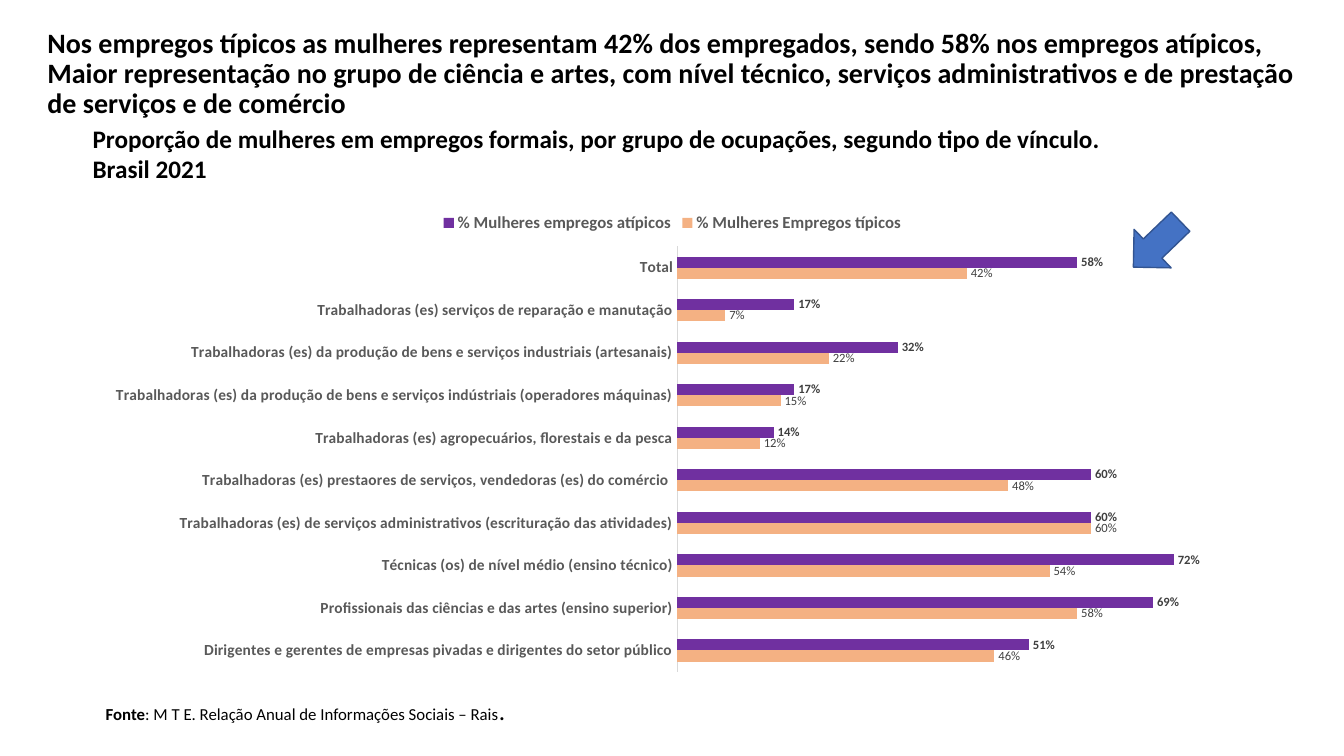
import pptx
import pptx.chart.data
import pptx.dml.color
import pptx.enum.chart
import pptx.enum.shapes
import pptx.enum.text
import pptx.util
from pptx.util import Inches


def color(hex_text):
    return pptx.dml.color.RGBColor.from_string(hex_text)


def format_font(font, size, hex_text, bold=False):
    font.name = "Calibri"
    font.size = pptx.util.Pt(size)
    font.bold = bold
    font.color.rgb = color(hex_text)


presentation = pptx.Presentation()
presentation.slide_width = Inches(13.33)
presentation.slide_height = Inches(7.5)
slide = presentation.slides.add_slide(presentation.slide_layouts[5])

# Title
title = slide.shapes.title
title.left, title.top = Inches(0.37), Inches(0.26)
title.width, title.height = Inches(12.64), Inches(0.96)
title_frame = title.text_frame
title_frame.text = (
    "Nos empregos típicos as mulheres representam 42% dos empregados, "
    "sendo 58% nos empregos atípicos, \v"
    "Maior representação no grupo de ciência e artes, com nível técnico, "
    "serviços administrativos e de prestação de serviços e de comércio"
)
title_frame.word_wrap = True
title_frame.auto_size = pptx.enum.text.MSO_AUTO_SIZE.NONE
title_frame.vertical_anchor = pptx.enum.text.MSO_ANCHOR.MIDDLE
paragraph = title_frame.paragraphs[0]
paragraph.alignment = pptx.enum.text.PP_ALIGN.LEFT
paragraph.line_spacing = 0.9
paragraph.space_before = pptx.util.Pt(0)
for run in paragraph.runs:
    format_font(run.font, 20, "000000", True)

# Subtitle
subtitle = slide.shapes.add_textbox(Inches(0.82), Inches(1.17), Inches(10.4), Inches(0.71))
subtitle.text_frame.word_wrap = True
subtitle.text_frame.text = (
    "Proporção de mulheres em empregos formais, por grupo de ocupações, "
    "segundo tipo de vínculo. Brasil 2021"
)
format_font(subtitle.text_frame.paragraphs[0].runs[0].font, 18, "000000", True)

# Data source
source = slide.shapes.add_textbox(Inches(0.95), Inches(6.83), Inches(6.67), Inches(0.41))
source.text_frame.word_wrap = True
paragraph = source.text_frame.paragraphs[0]
paragraph.line_spacing = 1.07
paragraph.space_after = pptx.util.Pt(8)
for text, size, bold in [
    ("Fonte", 12, True),
    (": M T E. Relação Anual de Informações Sociais – Rais", 12, False),
    (".", 18, False),
]:
    run = paragraph.add_run()
    run.text = text
    format_font(run.font, size, "000000", bold)

# Bar chart: occupation, share in typical jobs, share in atypical jobs
occupations = [
    ("Dirigentes e gerentes de empresas pivadas e dirigentes do setor público", 0.46, 0.51),
    ("Profissionais das ciências e das artes (ensino superior)", 0.58, 0.69),
    ("Técnicas (os) de nível médio (ensino técnico)", 0.54, 0.72),
    ("Trabalhadoras (es) de serviços administrativos (escrituração das atividades)", 0.6, 0.6),
    ("Trabalhadoras (es) prestaores de serviços, vendedoras (es) do comércio ", 0.48, 0.6),
    ("Trabalhadoras (es) agropecuários, florestais e da pesca", 0.12, 0.14),
    ("Trabalhadoras (es) da produção de bens e serviços indústriais (operadores máquinas)", 0.15, 0.17),
    ("Trabalhadoras (es) da produção de bens e serviços industriais (artesanais)", 0.22, 0.32),
    ("Trabalhadoras (es) serviços de reparação e manutação", 0.07, 0.17),
    ("Total", 0.42, 0.58),
]
names, typical, atypical = zip(*occupations)
chart_data = pptx.chart.data.CategoryChartData(number_format="0%")
chart_data.categories = names
chart_data.add_series("% Mulheres Empregos típicos", typical)
chart_data.add_series("% Mulheres empregos atípicos", atypical)
chart = slide.shapes.add_chart(
    pptx.enum.chart.XL_CHART_TYPE.BAR_CLUSTERED,
    Inches(0.92), Inches(2), Inches(11.5), Inches(4.76), chart_data,
).chart
chart.has_title = False
format_font(chart.font, 10, "000000")

chart.has_legend = True
chart.legend.position = pptx.enum.chart.XL_LEGEND_POSITION.TOP
chart.legend.include_in_layout = False
format_font(chart.legend.font, 12, "595959", True)

category_axis = chart.category_axis
category_axis.major_tick_mark = pptx.enum.chart.XL_TICK_MARK.NONE
category_axis.format.line.color.rgb = color("D9D9D9")
category_axis.format.line.width = pptx.util.Pt(0.75)
format_font(category_axis.tick_labels.font, 11, "595959", True)

value_axis = chart.value_axis
value_axis.visible = False
value_axis.has_major_gridlines = False
value_axis.minimum_scale = 0
value_axis.maximum_scale = 0.8

plot = chart.plots[0]
plot.gap_width = 182
plot.overlap = 0
plot.vary_by_categories = False
for series, fill, bold in zip(plot.series, ["F4B183", "7030A0"], [False, True]):
    series.format.fill.solid()
    series.format.fill.fore_color.rgb = color(fill)
    labels = series.data_labels
    labels.show_value = True
    labels.number_format = "0%"
    labels.number_format_is_linked = False
    labels.position = pptx.enum.chart.XL_LABEL_POSITION.OUTSIDE_END
    format_font(labels.font, 9, "404040", bold)

# Arrow pointing at the total
arrow = slide.shapes.add_shape(
    pptx.enum.shapes.MSO_SHAPE.DOWN_ARROW,
    Inches(11.21), Inches(2.1), Inches(0.53), Inches(0.65),
)
arrow.rotation = 46.1
arrow.shadow.inherit = False
arrow.fill.solid()
arrow.fill.fore_color.rgb = color("4472C4")
arrow.line.color.rgb = color("325491")
arrow.line.width = pptx.util.Pt(1)

presentation.save("out.pptx")
